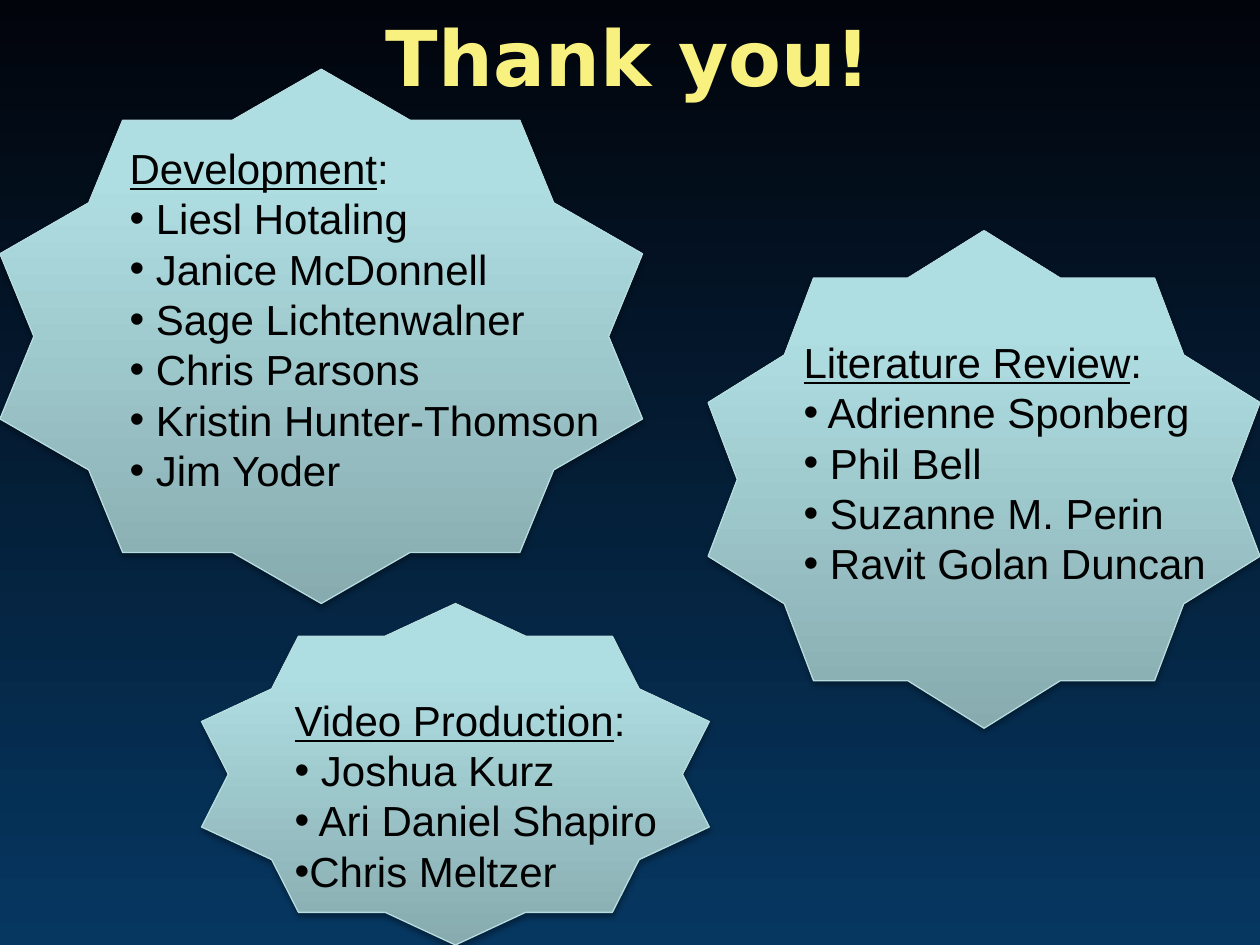
from dataclasses import dataclass

from lxml import etree
from pptx import Presentation
from pptx import util as u
from pptx.dml.color import RGBColor
from pptx.enum import shapes, text
from pptx.oxml import ns


@dataclass(frozen=True)
class Theme:
    night: tuple = ((0, "02040B"), (100, "063761"))
    ice: tuple = ((0, "87ABAE"), (80, "AFDEE2"), (100, "AFE0E4"))
    edge: str = "B6DCDF"
    title: str = "F9F17F"
    ink: str = "000000"
    title_font: str = "DejaVu Sans"
    body_font: str = "Arial"
    title_size: int = 44
    body_size: int = 24
    edge_width: float = 0.75


def child(parent, tag, **attributes):
    return etree.SubElement(parent, ns.qn(tag), attributes)


class ThanksSlide:
    COLUMNS, ROWS = 10, 7.5

    def __init__(self, deck, theme):
        self.theme = theme
        self.cell_width = deck.slide_width / self.COLUMNS
        self.cell_height = deck.slide_height / self.ROWS
        self.slide = deck.slides.add_slide(deck.slide_layouts[5])

    def area(self, left, top, width, height):
        return (round(left * self.cell_width), round(top * self.cell_height),
                round(width * self.cell_width), round(height * self.cell_height))

    def style_font(self, font, name, size, color):
        font.name, font.size = name, u.Pt(size)
        font.color.rgb = RGBColor.from_string(color)

    def gradient(self, fill, owner, stops, angle):
        fill.gradient()
        fill.gradient_angle = angle
        stop_list = owner.xpath(".//a:gradFill/a:gsLst")[0]
        for old in list(stop_list):
            stop_list.remove(old)
        for position, color in stops:
            stop = child(stop_list, "a:gs", pos=str(position * 1000))
            child(stop, "a:srgbClr", val=color)

    def background(self):
        self.gradient(self.slide.background.fill, self.slide.element,
                      self.theme.night, 270)

    def title(self, wording, area):
        heading = self.slide.shapes.title
        heading.left, heading.top, heading.width, heading.height = self.area(*area)
        frame = heading.text_frame
        frame.text = wording
        frame.vertical_anchor = text.MSO_ANCHOR.MIDDLE
        line = frame.paragraphs[0]
        line.alignment = text.PP_ALIGN.CENTER
        self.style_font(line.font, self.theme.title_font,
                        self.theme.title_size, self.theme.title)
        line.font.bold = True

    def star(self, canvas, area):
        burst = canvas.add_shape(shapes.MSO_SHAPE.STAR_10_POINT, *self.area(*area))
        self.gradient(burst.fill, burst.element, self.theme.ice, 90)
        burst.line.color.rgb = RGBColor.from_string(self.theme.edge)
        burst.line.width = u.Pt(self.theme.edge_width)
        burst.shadow.inherit = False
        effects = burst.element.spPr.find(ns.qn("a:effectLst"))
        shadow = child(effects, "a:outerShdw", blurRad=str(u.Pt(3.1)),
                       dist=str(u.Pt(1.8)), dir="5400000", rotWithShape="0")
        child(child(shadow, "a:srgbClr", val="000000"), "a:alpha", val="35000")

    def credits(self, canvas, area, role, names):
        frame = canvas.add_textbox(*self.area(*area)).text_frame
        frame.word_wrap = False
        frame.auto_size = text.MSO_AUTO_SIZE.SHAPE_TO_FIT_TEXT
        heading = frame.paragraphs[0]
        label = heading.add_run()
        label.text = role
        label.font.underline = True
        heading.add_run().text = ":"
        for name in names:
            entry = frame.add_paragraph()
            entry.text = name
            properties = entry._p.get_or_add_pPr()
            child(properties, "a:buFont", typeface=self.theme.body_font)
            child(properties, "a:buChar", char="•")
        for line in frame.paragraphs:
            self.style_font(line.font, self.theme.body_font,
                            self.theme.body_size, self.theme.ink)

    def team(self, star_area, credits_area, role, names, grouped=True):
        canvas = self.slide.shapes
        if grouped:
            canvas = canvas.add_group_shape().shapes
        self.star(canvas, star_area)
        self.credits(canvas, credits_area, role, names)


def main():
    deck = Presentation()
    deck.slide_width, deck.slide_height = u.Inches(10), u.Inches(7.5)
    thanks = ThanksSlide(deck, Theme())
    thanks.background()
    thanks.title("Thank you!", (0.49, 0, 9, 0.88))
    thanks.team((1.6, 4.79, 4.03, 2.71), (2.24, 5.46, 3.09, 1.72),
                "Video Production",
                [" Joshua Kurz", " Ari Daniel Shapiro", "Chris Meltzer"],
                grouped=False)
    thanks.team((5.62, 1.83, 4.38, 3.95), (6.28, 2.62, 3.41, 2.12),
                "Literature Review",
                [" Adrienne Sponberg", " Phil Bell", " Suzanne M. Perin",
                 " Ravit Golan Duncan"])
    thanks.team((0, 0.55, 5.1, 4.24), (0.93, 1.08, 3.95, 2.93),
                "Development",
                [" Liesl Hotaling", " Janice McDonnell", " Sage Lichtenwalner",
                 " Chris Parsons", " Kristin Hunter-Thomson", " Jim Yoder"])
    deck.save("out.pptx")


if __name__ == "__main__":
    main()
